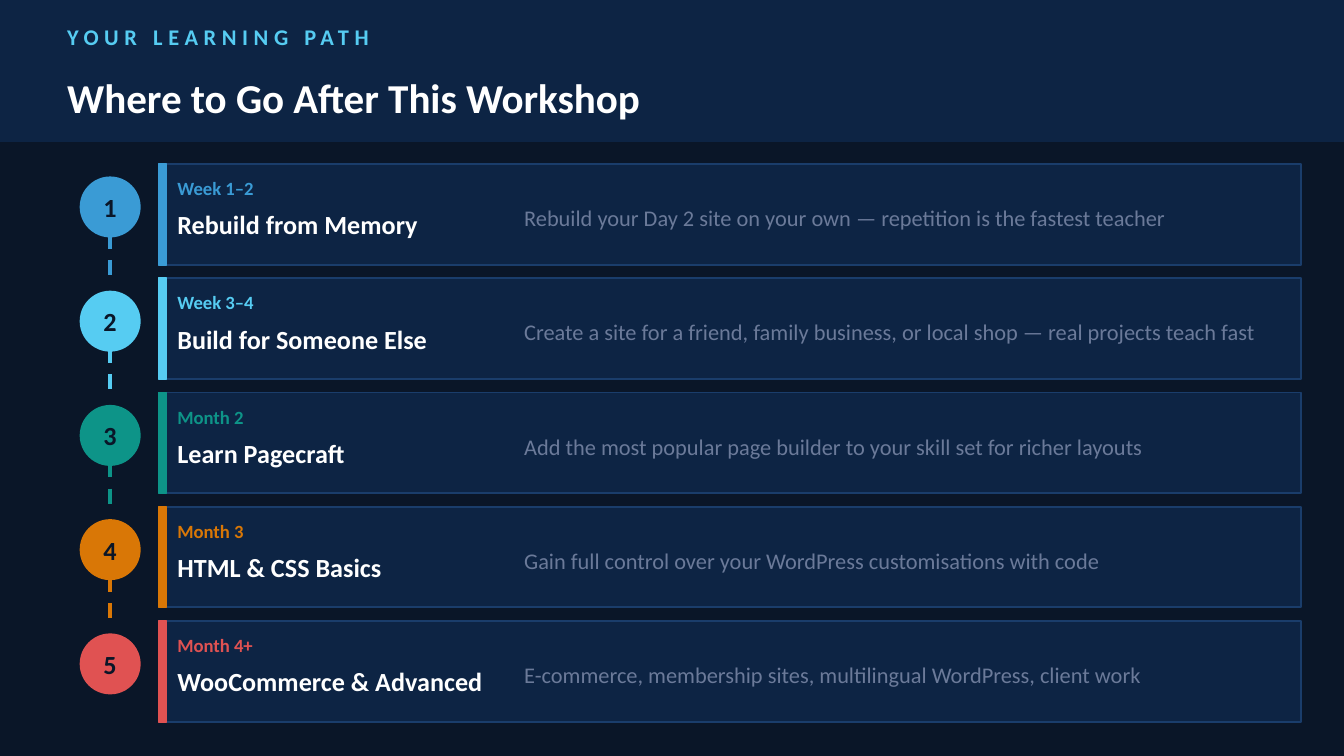
from lxml import etree
from pptx import Presentation
from pptx.dml.color import RGBColor
from pptx.enum.dml import MSO_LINE
from pptx.enum.shapes import MSO_CONNECTOR, MSO_SHAPE
from pptx.enum.text import MSO_ANCHOR, PP_ALIGN
from pptx.oxml.ns import qn
from pptx.util import Pt

NIGHT = RGBColor(0x0A, 0x16, 0x28)
NAVY = RGBColor(0x0D, 0x24, 0x44)
EDGE = RGBColor(0x1A, 0x3D, 0x6B)
WHITE = RGBColor(0xFF, 0xFF, 0xFF)
GREY = RGBColor(0x6B, 0x7A, 0x99)
BLUE = RGBColor(0x3A, 0x9B, 0xD5)
SKY = RGBColor(0x56, 0xCC, 0xF2)
TEAL = RGBColor(0x0D, 0x94, 0x88)
ORANGE = RGBColor(0xD9, 0x77, 0x06)
RED = RGBColor(0xE0, 0x52, 0x52)

STEPS = [
    (BLUE, "Week 1–2", "Rebuild from Memory",
     "Rebuild your Day 2 site on your own — repetition is the fastest teacher"),
    (SKY, "Week 3–4", "Build for Someone Else",
     "Create a site for a friend, family business, or local shop — real projects teach fast"),
    (TEAL, "Month 2", "Learn Pagecraft",
     "Add the most popular page builder to your skill set for richer layouts"),
    (ORANGE, "Month 3", "HTML & CSS Basics",
     "Gain full control over your WordPress customisations with code"),
    (RED, "Month 4+", "WooCommerce & Advanced",
     "E-commerce, membership sites, multilingual WordPress, client work"),
]
FIRST_TOP, PITCH = 87.84, 61.2
CARD_LEFT, CARD_HEIGHT = 84.96, 54
CIRCLE_LEFT, CIRCLE_SIZE = 43.2, 31.68
LABEL_LEFT = 95.04

prs = Presentation()
prs.slide_width, prs.slide_height = Pt(720), Pt(405)
s = prs.slides.add_slide(prs.slide_layouts[6])
s.background.fill.solid()
s.background.fill.fore_color.rgb = NIGHT


def add_box(kind, left, top, width, height, fill, edge):
    sp = s.shapes.add_shape(kind, Pt(left), Pt(top), Pt(width), Pt(height))
    sp.shadow.inherit = False
    sp.fill.solid()
    sp.fill.fore_color.rgb = fill
    sp.line.color.rgb = edge
    sp.line.width = Pt(1)
    return sp


def write(sp, text, size, color, bold=True):
    """Fill a shape with one vertically centred paragraph and return it."""
    tf = sp.text_frame
    tf.word_wrap = True
    tf.vertical_anchor = MSO_ANCHOR.MIDDLE
    tf.margin_left = tf.margin_top = tf.margin_right = tf.margin_bottom = 0
    p = tf.paragraphs[0]
    p.text = text
    font = p.runs[0].font
    font.name, font.size, font.bold = "Calibri", Pt(size), bold
    font.color.rgb = color
    return p


# Header
add_box(MSO_SHAPE.RECTANGLE, 0, 0, 720, 75.6, NAVY, NAVY)
sp = s.shapes.add_textbox(Pt(36), Pt(5.76), Pt(504), Pt(27.36))
p = write(sp, "YOUR LEARNING PATH", 12, SKY)
p.runs[0].font._element.set("spc", "300")
sp = s.shapes.add_textbox(Pt(36), Pt(37.44), Pt(648), Pt(28.8))
write(sp, "Where to Go After This Workshop", 22, WHITE)

# Steps
for i, (color, period, title, detail) in enumerate(STEPS):
    top = FIRST_TOP + i * PITCH

    if i < len(STEPS) - 1:
        x = Pt(CIRCLE_LEFT + CIRCLE_SIZE / 2)
        link = s.shapes.add_connector(MSO_CONNECTOR.STRAIGHT,
                                      x, Pt(top + 37.44), x, Pt(top + 64.8))
        link.line.color.rgb = color
        link.line.width = Pt(2)
        link.line.dash_style = MSO_LINE.DASH
        etree.SubElement(link._element.spPr, qn("a:effectLst"))

    circle = add_box(MSO_SHAPE.OVAL, CIRCLE_LEFT, top + 7.2,
                     CIRCLE_SIZE, CIRCLE_SIZE, color, color)
    write(circle, str(i + 1), 14, NIGHT).alignment = PP_ALIGN.CENTER

    add_box(MSO_SHAPE.RECTANGLE, CARD_LEFT, top, 612, CARD_HEIGHT, NAVY, EDGE)
    add_box(MSO_SHAPE.RECTANGLE, CARD_LEFT, top, 4.32, CARD_HEIGHT, color, color)

    sp = s.shapes.add_textbox(Pt(LABEL_LEFT), Pt(top + 2.88), Pt(86.4), Pt(20.16))
    write(sp, period, 10, color)
    sp = s.shapes.add_textbox(Pt(LABEL_LEFT), Pt(top + 21.6), Pt(180), Pt(21.6))
    write(sp, title, 14, WHITE)
    sp = s.shapes.add_textbox(Pt(280.8), Pt(top + 8.64), Pt(406.8), Pt(37.44))
    write(sp, detail, 12, GREY, bold=False).line_spacing = 1.2

prs.save("out.pptx")
